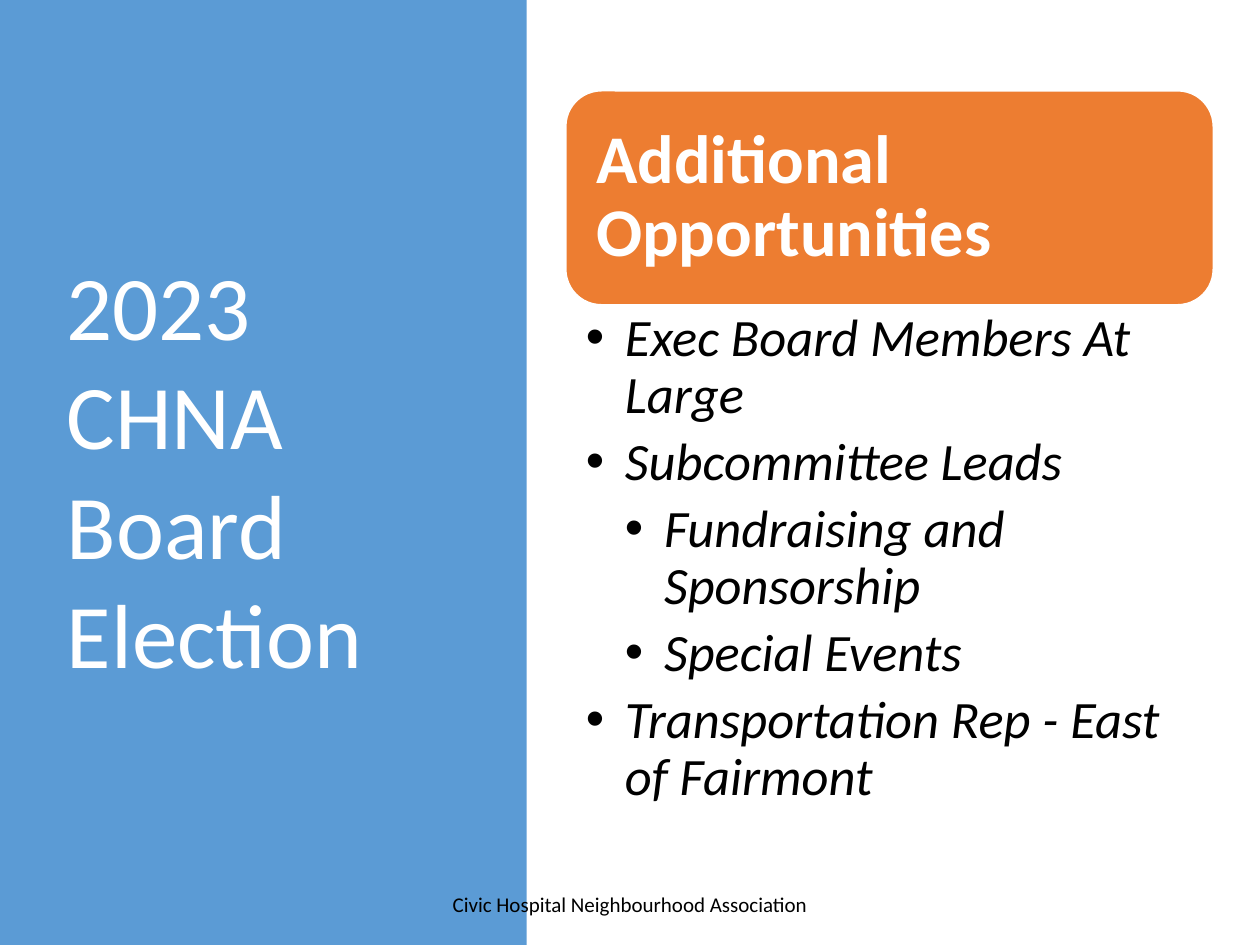
import pptx
import pptx.util
from lxml import etree
from pptx.dml.color import RGBColor
from pptx.enum.shapes import MSO_SHAPE
from pptx.enum.text import MSO_ANCHOR, MSO_AUTO_SIZE, PP_ALIGN
from pptx.oxml.ns import qn

BLUE = RGBColor(0x5B, 0x9B, 0xD5)
ORANGE = RGBColor(0xED, 0x7D, 0x31)
WHITE = RGBColor(0xFF, 0xFF, 0xFF)
BLACK = RGBColor(0x00, 0x00, 0x00)

deck = pptx.Presentation()
deck.slide_width = pptx.util.Inches(10)
deck.slide_height = pptx.util.Inches(7.5)
COL = deck.slide_width / 100
ROW = deck.slide_height / 75

slide = deck.slides.add_slide(deck.slide_layouts[1])
shapes = slide.shapes


def cells(left, top, width, height):
    """Turn grid columns and rows into slide lengths."""
    return [round(n * unit) for n, unit in zip((left, top, width, height), (COL, ROW, COL, ROW))]


def set_text(shape, lines, size, color, anchor, insets, bold=False, italic=False):
    """Fill a shape with left-aligned paragraphs in one style; insets are in inches."""
    frame = shape.text_frame
    frame.text = "\n".join(lines)
    frame.word_wrap = True
    frame.auto_size = MSO_AUTO_SIZE.NONE
    frame.vertical_anchor = anchor
    (frame.margin_left, frame.margin_top,
     frame.margin_right, frame.margin_bottom) = map(pptx.util.Inches, insets)
    for paragraph in frame.paragraphs:
        paragraph.alignment = PP_ALIGN.LEFT
        paragraph.space_before = pptx.util.Pt(0)
        for run in paragraph.runs:
            run.font.name = "Calibri"
            run.font.size = pptx.util.Pt(size)
            run.font.color.rgb = color
            run.font.bold = bold
            run.font.italic = italic
    return frame.paragraphs


# Blue side panel with the election title
title = shapes.title
side_panel = shapes.add_shape(MSO_SHAPE.RECTANGLE, *cells(0, 0, 41.8, 75))
side_panel.fill.solid()
side_panel.fill.fore_color.rgb = BLUE
side_panel.line.fill.background()
side_panel.shadow.inherit = False
title.element.addprevious(side_panel.element)

title.left, title.top, title.width, title.height = cells(4.3, 6.8, 31.2, 60.2)
set_text(title, ["2023 CHNA Board Election"], 52, WHITE,
         MSO_ANCHOR.MIDDLE, (0.1, 0.1, 0.1, 0.05))

# Association name at the foot
association = shapes.add_textbox(*cells(33.1, 69.5, 33.8, 4))
association_line, = set_text(association, ["Civic Hospital Neighbourhood Association"], 12, BLACK,
                             MSO_ANCHOR.MIDDLE, (0.1, 0.1, 0.1, 0.05))
association_line.alignment = PP_ALIGN.CENTER

# Heading of the opportunities
heading = shapes.add_shape(MSO_SHAPE.ROUNDED_RECTANGLE, *cells(44.9, 7.2, 51.4, 17))
heading.fill.solid()
heading.fill.fore_color.rgb = ORANGE
heading.line.color.rgb = WHITE
heading.line.width = pptx.util.Pt(1)
heading.shadow.inherit = False
heading_line, = set_text(heading, ["Additional Opportunities"], 39, WHITE,
                         MSO_ANCHOR.MIDDLE, (0.16, 0.16, 0.16, 0.16), bold=True)
heading_line.line_spacing = 0.9

# Open positions, with the subcommittees one level down
positions = [
    ("Exec Board Members At Large", 0),
    ("Subcommittee Leads", 0),
    ("Fundraising and Sponsorship", 1),
    ("Special Events", 1),
    ("Transportation Rep - East of Fairmont", 0),
]
opportunities = slide.placeholders[1]
(opportunities.left, opportunities.top,
 opportunities.width, opportunities.height) = cells(44.9, 24.2, 51.4, 42.4)
entries = set_text(opportunities, [name for name, level in positions], 30, BLACK,
                   MSO_ANCHOR.TOP, (0.16, 0.05, 0.3, 0.05), italic=True)
indent = pptx.util.Inches(0.31)
for entry, (name, level) in zip(entries, positions):
    entry.level = level
    entry.line_spacing = 0.9
    entry.space_after = pptx.util.Pt(6)
    properties = entry._p.get_or_add_pPr()
    properties.set("marL", str(indent * (level + 1)))
    properties.set("indent", str(-indent))
    etree.SubElement(properties, qn("a:buFont")).set("typeface", "Arial")
    etree.SubElement(properties, qn("a:buChar")).set("char", "•")

deck.save("out.pptx")
